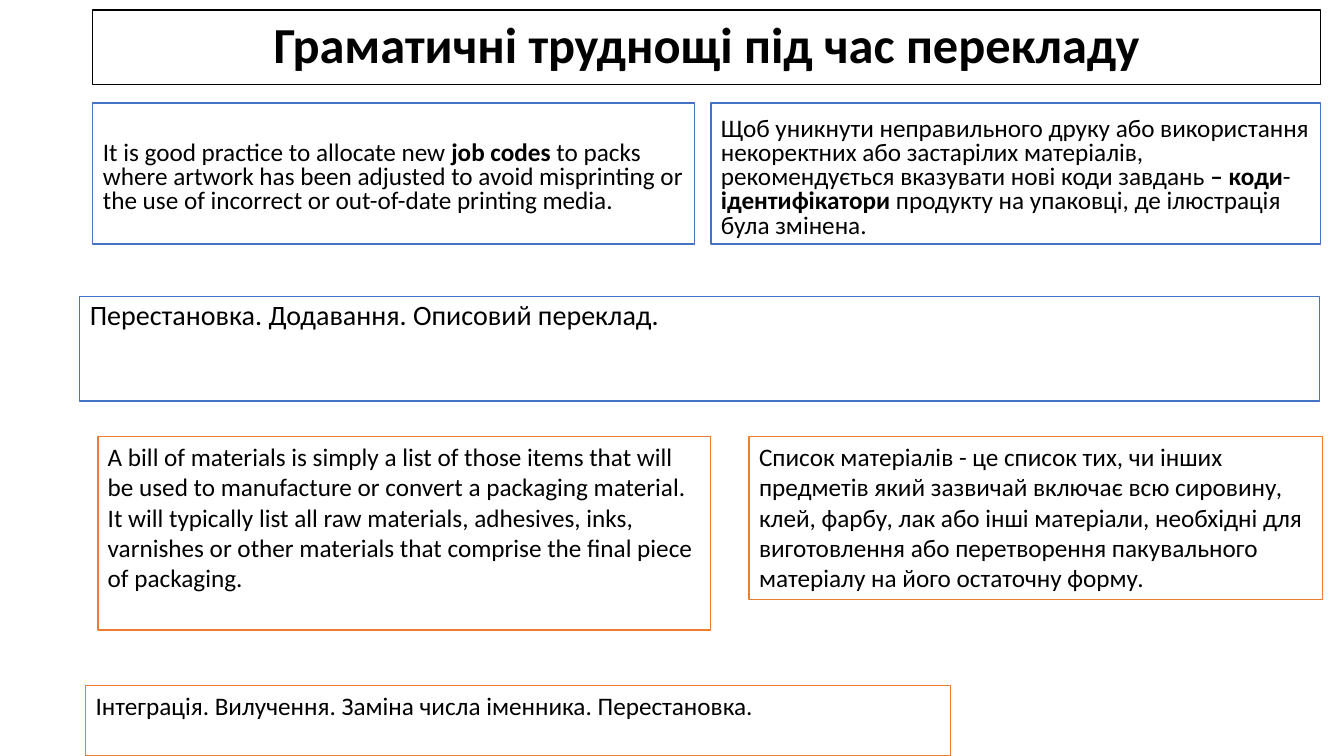
import dataclasses

import pptx
import pptx.dml.color
import pptx.enum.text
import pptx.oxml.ns
import pptx.util

Inches, Pt = pptx.util.Inches, pptx.util.Pt
ANCHOR = pptx.enum.text.MSO_ANCHOR
ALIGN = pptx.enum.text.PP_ALIGN


@dataclasses.dataclass(frozen=True)
class Theme:
    font: str = "Calibri"
    text: str = "000000"
    paper: str = "FFFFFF"
    first: str = "4472C4"
    second: str = "ED7D31"
    title_size: int = 36
    method_size: int = 20
    body_size: int = 18


THEME = Theme()

# Content: runs are (text, bold)
TITLE = [("Граматичні труднощі під час перекладу", True)]
JOB_CODES_EN = [
    ("It is good practice to allocate new ", False),
    ("job codes", True),
    (" to packs where artwork has been adjusted to avoid misprinting or "
     "the use of incorrect or out-of-date printing media.", False),
]
JOB_CODES_UK = [
    ("Щоб уникнути неправильного друку або використання некоректних або "
     "застарілих матеріалів, рекомендується вказувати нові коди завдань ", False),
    ("– коди", True),
    ("-", False),
    ("ідентифікатори ", True),
    ("продукту на упаковці, де ілюстрація була змінена.", False),
]
JOB_CODES_METHODS = [("Перестановка. Додавання. Описовий переклад.", False)]
MATERIALS_EN = [
    ("A bill of materials is simply a list of those items that will be used to "
     "manufacture or convert a packaging material. It will typically list all raw "
     "materials, adhesives, inks, varnishes or other materials that comprise the "
     "final piece of packaging.", False),
]
MATERIALS_UK = [
    ("Список матеріалів - це список тих, чи інших предметів який зазвичай включає "
     "всю сировину, клей, фарбу, лак або інші матеріали, необхідні для виготовлення "
     "або перетворення пакувального матеріалу на його остаточну форму.", False),
]
MATERIALS_METHODS = [
    ("Інтеграція. Вилучення. Заміна числа іменника. Перестановка.", False),
]

# Placement: left, top, width, height in inches
LEFT, RIGHT = 0.92, 13.1
PAIR_TOP, PAIR_HEIGHT, PAIR_SPLIT = 1.02, 1.4, 7.05
TITLE_AT = (LEFT, 0.1, RIGHT - LEFT, 0.74)
JOB_CODES_EN_AT = (LEFT, PAIR_TOP, 5.97, PAIR_HEIGHT)
JOB_CODES_UK_AT = (PAIR_SPLIT, PAIR_TOP, RIGHT - PAIR_SPLIT, PAIR_HEIGHT)
JOB_CODES_METHODS_AT = (0.79, 2.94, 12.3, 1.04)
MATERIALS = [
    (MATERIALS_EN, (0.97, 4.33, 6.08, 1.92)),
    (MATERIALS_UK, (7.43, 4.33, 5.69, 1.62)),
    (MATERIALS_METHODS, (0.85, 6.8, 8.58, 0.7)),
]


def color(value):
    return pptx.dml.color.RGBColor.from_string(value)


def fill_box(box, at, runs, outline, size=THEME.body_size, spacing=1.0,
             anchor=ANCHOR.TOP, align=ALIGN.LEFT, bottom=0.05):
    """Place a framed box and write its single paragraph."""
    box.left, box.top, box.width, box.height = map(Inches, at)
    box.fill.solid()
    box.fill.fore_color.rgb = color(THEME.paper)
    box.line.color.rgb = color(outline)
    box.line.width = Pt(1)

    frame = box.text_frame
    frame.word_wrap = True
    frame.auto_size = pptx.enum.text.MSO_AUTO_SIZE.NONE
    frame.vertical_anchor = anchor
    frame.margin_left = frame.margin_right = Inches(0.1)
    frame.margin_top, frame.margin_bottom = Inches(0.05), Inches(bottom)

    paragraph = frame.paragraphs[0]
    paragraph.alignment = align
    paragraph.line_spacing = spacing
    paragraph.space_before = Pt(0)
    properties = paragraph._p.get_or_add_pPr()
    properties.set("marL", "0")
    properties.set("indent", "0")
    properties.append(properties.makeelement(pptx.oxml.ns.qn("a:buNone"), {}))
    for text, bold in runs:
        run = paragraph.add_run()
        run.text = text
        run.font.name = THEME.font
        run.font.size = Pt(size)
        run.font.bold = bold
        run.font.color.rgb = color(THEME.text)


def main():
    deck = pptx.Presentation()
    deck.slide_width, deck.slide_height = Inches(13.33), Inches(7.5)
    slide = deck.slides.add_slide(deck.slide_layouts[4])
    holders = {holder.placeholder_format.idx: holder for holder in slide.placeholders}

    # Title
    fill_box(holders[0], TITLE_AT, TITLE, THEME.text, THEME.title_size, 0.9,
             ANCHOR.MIDDLE, ALIGN.CENTER)

    # First example: source, methods, translation
    fill_box(holders[1], JOB_CODES_EN_AT, JOB_CODES_EN, THEME.first, spacing=0.8,
             anchor=ANCHOR.BOTTOM, bottom=0.29)
    fill_box(holders[2], JOB_CODES_METHODS_AT, JOB_CODES_METHODS, THEME.first,
             THEME.method_size, 0.9)
    fill_box(holders[3], JOB_CODES_UK_AT, JOB_CODES_UK, THEME.first, spacing=0.8,
             anchor=ANCHOR.BOTTOM)
    unused = holders[4].element
    unused.getparent().remove(unused)

    # Second example: source, translation, methods
    for runs, at in MATERIALS:
        fill_box(slide.shapes.add_textbox(*map(Inches, at)), at, runs, THEME.second)

    deck.save("out.pptx")


if __name__ == "__main__":
    main()
